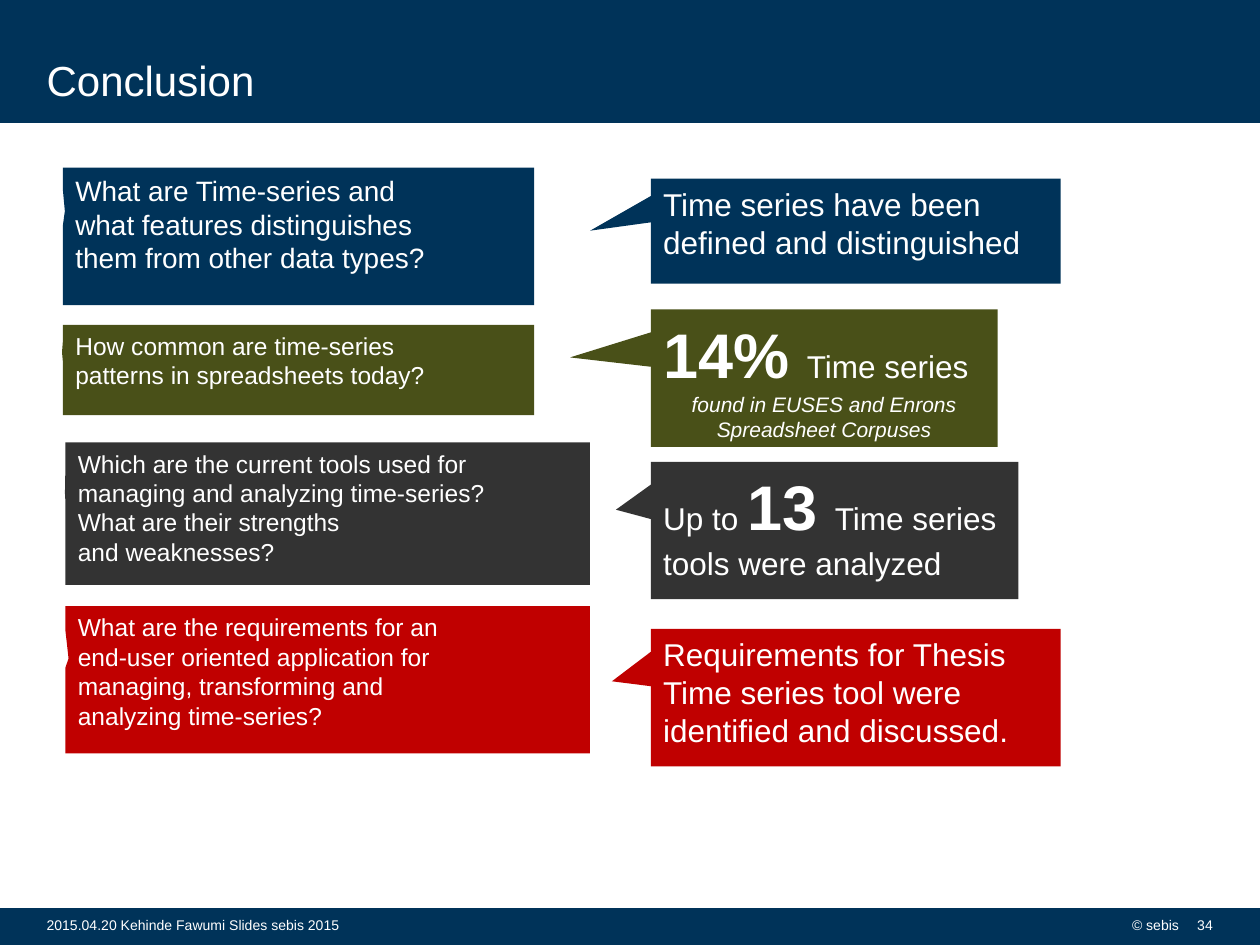
from pptx import Presentation
from pptx.dml.color import RGBColor as RGB
from pptx.enum.shapes import MSO_SHAPE as Kind
from pptx.enum.text import MSO_ANCHOR as Anchor, PP_ALIGN as Align
from pptx.util import Cm, Pt

NAVY = RGB(0x00, 0x33, 0x59)
OLIVE = RGB(0x49, 0x50, 0x18)
GREY = RGB(0x33, 0x33, 0x33)
RED = RGB(0xC0, 0x00, 0x00)
WHITE = RGB(0xFF, 0xFF, 0xFF)
FONT = "Arial"

ASKS = [
    (1.27, 3.38, 9.5, 2.77, NAVY, (-0.496, -0.183), 16,
     ["What are Time-series and\nwhat features distinguishes\nthem from other data types?"]),
    (1.27, 6.55, 9.5, 1.82, OLIVE, (-0.502, -0.197), 14,
     ["How common are time-series\npatterns in spreadsheets today?"]),
    (1.32, 8.92, 10.57, 2.87, GREY, (-0.501, -0.144), 14,
     ["Which are the current tools used for managing and analyzing time-series?",
      "What are their strengths", "and weaknesses?"]),
    (1.32, 12.22, 10.57, 2.97, RED, (-0.494, -0.144), 14,
     ["What are the requirements for an", "end-user oriented application for",
      "managing, transforming and", "analyzing time-series?"]),
]

FINDS = [
    (3.6, 8.26, 2.12, NAVY, (-0.648, -0.004),
     [(Align.LEFT, [("Time series have been defined and distinguished", 18, "")])]),
    (6.24, 6.99, 2.77, OLIVE, (-0.733, -0.151),
     [(Align.LEFT, [("14% ", 36, "b"), ("Time series", 18, "")]),
      (Align.CENTER, [("found in EUSES and Enrons Spreadsheet Corpuses", 12, "i")])]),
    (9.31, 7.41, 2.77, GREY, (-0.595, -0.151),
     [(Align.LEFT, [("Up to ", 18, ""), ("13 ", 36, "b"),
                    ("Time series tools were analyzed", 18, "")])]),
    (12.68, 8.26, 2.77, RED, (-0.595, -0.119),
     [(Align.LEFT, [("Requirements for Thesis Time series tool were identified and discussed.",
                     18, "")])]),
]


def add_run(para, text, size, style=""):
    """Add white text to a paragraph, breaking it at line ends."""
    for num, line in enumerate(text.split("\n")):
        if num:
            para.add_line_break()
        run = para.add_run()
        run.text = line
        font = run.font
        font.name, font.size = FONT, Pt(size)
        font.color.rgb = WHITE
        font.bold, font.italic = "b" in style, "i" in style


def add_box(slide, kind, left, top, width, height, fill):
    """Add a filled shape without outline or shadow."""
    box = slide.shapes.add_shape(kind, Cm(left), Cm(top), Cm(width), Cm(height))
    box.shadow.inherit = False
    box.fill.solid()
    box.fill.fore_color.rgb = fill
    box.line.fill.background()
    return box


def add_bar(slide, top, height):
    """Add a navy bar across the slide."""
    bar = add_box(slide, Kind.RECTANGLE, 0, top, 25.4, height, NAVY)
    bar.line.color.rgb = NAVY
    bar.line.width = Pt(1.35)


def add_label(slide, left, top, width, height, text, size,
              align=Align.LEFT, anchor=Anchor.MIDDLE):
    """Add one line of white text on a bar."""
    frame = slide.shapes.add_textbox(Cm(left), Cm(top), Cm(width), Cm(height)).text_frame
    frame.word_wrap = True
    frame.vertical_anchor = anchor
    frame.margin_top = frame.margin_bottom = 0
    para = frame.paragraphs[0]
    para.alignment = align
    add_run(para, text, size)


def add_note(slide, left, top, width, height, fill, tip, paras, right=0.25):
    """Add a callout with its tip and its paragraphs of runs."""
    note = add_box(slide, Kind.RECTANGULAR_CALLOUT, left, top, width, height, fill)
    note.adjustments[0], note.adjustments[1] = tip
    frame = note.text_frame
    frame.word_wrap = True
    frame.vertical_anchor = Anchor.TOP
    frame.margin_right = Cm(right)
    for num, (align, runs) in enumerate(paras):
        para = frame.add_paragraph() if num else frame.paragraphs[0]
        para.alignment = align
        for run in runs:
            add_run(para, *run)


def main():
    """Build the slide and save it."""
    deck = Presentation()
    deck.slide_width, deck.slide_height = Cm(25.4), Cm(19.05)
    slide = deck.slides.add_slide(deck.slide_layouts[6])
    add_bar(slide, 18.32, 0.73)
    add_bar(slide, 0.03, 2.42)
    add_label(slide, 0.69, 0.11, 20.93, 2.01, "Conclusion", 24, anchor=Anchor.BOTTOM)
    add_label(slide, 0.69, 18.25, 12.01, 0.81, "2015.04.20 Kehinde Fawumi Slides sebis 2015", 8)
    add_label(slide, 19.55, 18.25, 4.47, 0.81, "© sebis", 8, Align.RIGHT)
    add_label(slide, 23.2, 18.25, 1.5, 0.81, "34", 8, Align.RIGHT)
    for *place, size, lines in ASKS:
        add_note(slide, *place, [(Align.LEFT, [(line, size)]) for line in lines], right=0.6)
    for find in FINDS:
        add_note(slide, 13.12, *find)
    deck.save("out.pptx")


if __name__ == "__main__":
    main()
